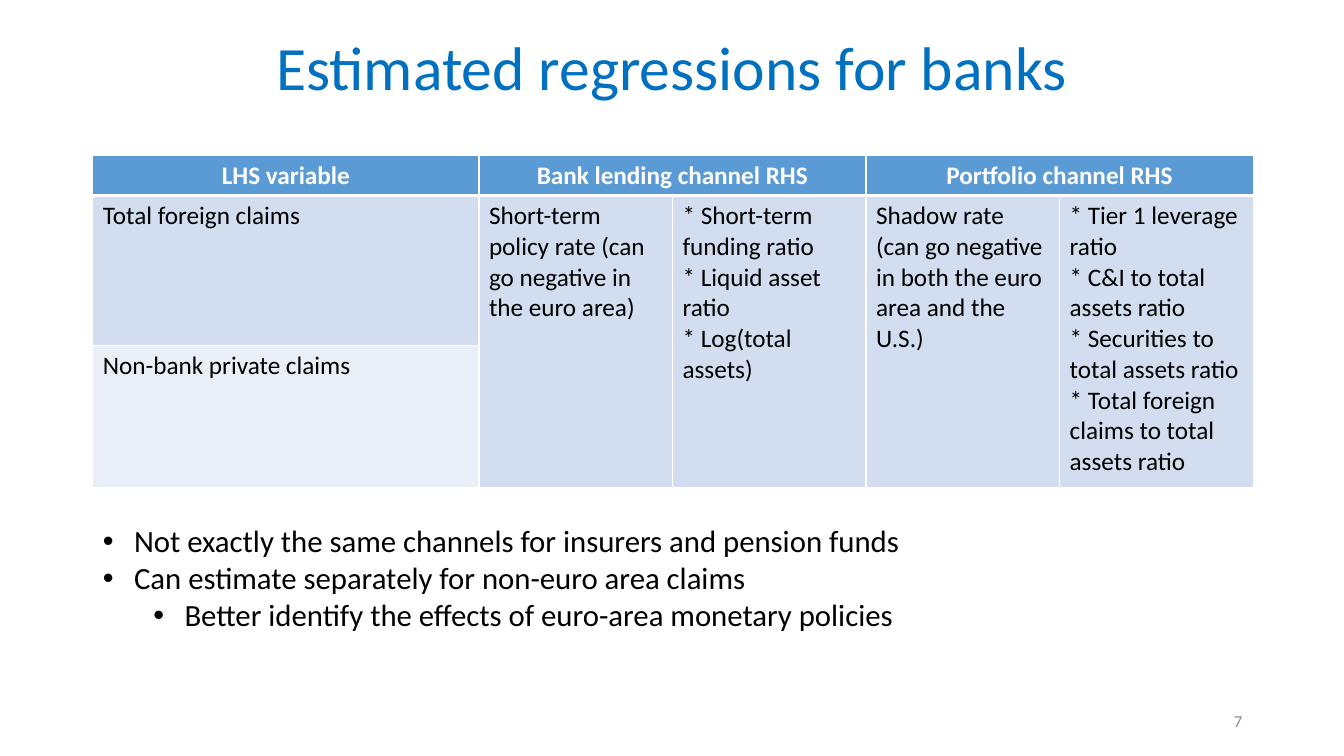
from lxml.etree import SubElement
from pptx import Presentation
from pptx.dml.color import RGBColor
from pptx.enum.text import MSO_ANCHOR, MSO_AUTO_SIZE, PP_ALIGN
from pptx.oxml.ns import qn
from pptx.util import Inches, Pt

HUES = {
    "title": "0070C0",
    "head": "5B9BD5",
    "band": "D2DEEF",
    "pale": "EAEFF7",
    "white": "FFFFFF",
    "black": "000000",
    "gray": "8C8C8C",
}
HEADS = ["LHS variable", "Bank lending channel RHS", None, "Portfolio channel RHS", None]
CLAIMS = [
    "Total foreign claims",
    "Short-term policy rate (can go negative in the euro area)",
    "* Short-term funding ratio\n* Liquid asset ratio\n* Log(total assets)",
    "Shadow rate (can go negative in both the euro area and the U.S.)",
    "* Tier 1 leverage ratio\n* C&I to total assets ratio\n"
    "* Securities to total assets ratio\n* Total foreign claims to total assets ratio",
]
OTHER = ["Non-bank private claims", None, None, None, None]
SPANS = [(0, 1, 0, 2), (0, 3, 0, 4)] + [(1, col, 2, col) for col in range(1, 5)]
NOTES = [
    (0, "Not exactly the same channels for insurers and pension funds"),
    (0, "Can estimate separately for non-euro area claims"),
    (1, "Better identify the effects of euro-area monetary policies"),
]


class Deck:
    font = "Calibri"

    def __init__(self, wide, high):
        self.show = Presentation()
        self.show.slide_width = Inches(wide)
        self.show.slide_height = Inches(high)
        self.slide = self.show.slides.add_slide(self.show.slide_layouts[1])

    def hue(self, name):
        return RGBColor.from_string(HUES[name])

    def place(self, shape, box):
        shape.left, shape.top, shape.width, shape.height = map(Inches, box)

    def style(self, frame, size, hue, align=PP_ALIGN.LEFT, bold=False):
        for para in frame.paragraphs:
            para.alignment = align
            for run in para.runs:
                run.font.name = self.font
                run.font.size = Pt(size)
                run.font.bold = bold
                run.font.color.rgb = self.hue(hue)

    def title(self, text, box):
        shape = self.slide.shapes.title
        self.place(shape, box)
        frame = shape.text_frame
        frame.text = text
        frame.vertical_anchor = MSO_ANCHOR.MIDDLE
        frame.paragraphs[0].line_spacing = 0.9
        self.style(frame, 44, "title", PP_ALIGN.CENTER)

    def edge(self, cell, row):
        props = cell._tc.get_or_add_tcPr()
        widths = {"lnL": 1, "lnR": 1, "lnT": 3 if row == 1 else 1, "lnB": 3 if row == 0 else 1}
        for side, width in widths.items():
            line = SubElement(props, qn(f"a:{side}"), w=str(Pt(width)))
            fill = SubElement(line, qn("a:solidFill"))
            SubElement(fill, qn("a:srgbClr"), val=HUES["white"])

    def table(self, rows, spans, box, cols, highs):
        grid = self.slide.shapes.add_table(len(rows), len(cols), *map(Inches, box)).table
        for col, width in zip(grid.columns, cols):
            col.width = Inches(width)
        for row, high in zip(grid.rows, highs):
            row.height = Inches(high)
        for top, left, end, right in spans:
            grid.cell(top, left).merge(grid.cell(end, right))
        fills = ["head", "band", "pale"]
        for row, texts in enumerate(rows):
            for col, text in enumerate(texts):
                cell = grid.cell(row, col)
                self.edge(cell, row)
                cell.fill.solid()
                cell.fill.fore_color.rgb = self.hue(fills[row])
                if text:
                    cell.text_frame.text = text
                    if row == 0:
                        self.style(cell.text_frame, 18, "white", PP_ALIGN.CENTER, True)
                    else:
                        self.style(cell.text_frame, 18, "black")

    def list(self, notes, box):
        shape = self.slide.placeholders[1]
        self.place(shape, box)
        frame = shape.text_frame
        frame.text = "\n".join(text for level, text in notes)
        frame.auto_size = MSO_AUTO_SIZE.SHAPE_TO_FIT_TEXT
        frame.vertical_anchor = MSO_ANCHOR.TOP
        self.style(frame, 22, "black")
        for para, (level, text) in zip(frame.paragraphs, notes):
            para.level = level
            para.space_before = Pt(0)
            props = para._p.get_or_add_pPr()
            props.set("marL", str(Inches(0.31 + 0.5 * level)))
            props.set("indent", str(Inches(-0.31)))
            SubElement(props, qn("a:buFont"), typeface="Arial")
            SubElement(props, qn("a:buChar"), char="•")

    def label(self, text, box):
        frame = self.slide.shapes.add_textbox(*map(Inches, box)).text_frame
        frame.word_wrap = True
        frame.text = text
        frame.vertical_anchor = MSO_ANCHOR.MIDDLE
        self.style(frame, 12, "gray", PP_ALIGN.RIGHT)


def main():
    deck = Deck(13.33, 7.5)
    deck.title("Estimated regressions for banks", (0, -0.02, 13.33, 1.45))
    deck.table(
        [HEADS, CLAIMS, OTHER],
        SPANS,
        (0.92, 1.54, 11.5, 3.3),
        [3.83] + [1.92] * 4,
        [0.4, 1.49, 1.41],
    )
    deck.label("7", (9.42, 6.95, 3, 0.4))
    deck.list(NOTES, (0.92, 5.13, 11.5, 1.21))
    deck.show.save("out.pptx")


if __name__ == "__main__":
    main()
